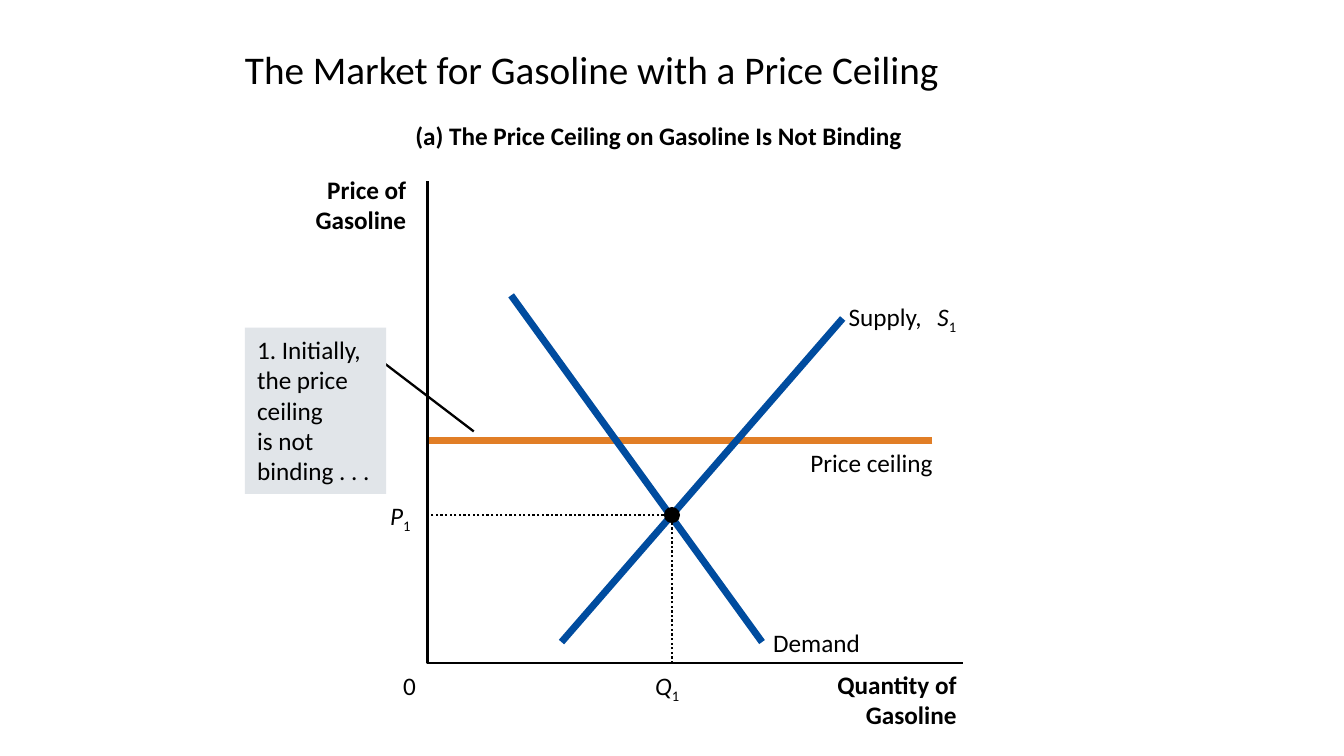
from lxml import etree
from pptx import Presentation
from pptx.dml.color import RGBColor
from pptx.enum.dml import MSO_LINE
from pptx.enum.shapes import MSO_CONNECTOR, MSO_SHAPE
from pptx.enum.text import MSO_ANCHOR, MSO_AUTO_SIZE, PP_ALIGN
from pptx.oxml.ns import qn
from pptx.util import Inches, Pt

STRAIGHT = MSO_CONNECTOR.STRAIGHT
RECTANGLE, OVAL = MSO_SHAPE.RECTANGLE, MSO_SHAPE.OVAL
LEFT, RIGHT = PP_ALIGN.LEFT, PP_ALIGN.RIGHT
TOP, MIDDLE = MSO_ANCHOR.TOP, MSO_ANCHOR.MIDDLE
NO_FIT = MSO_AUTO_SIZE.NONE
DOTTED = MSO_LINE.ROUND_DOT

COLORS = {"ink": "000000", "curve": "004C9F", "ceiling": "E17E26", "note": "E1E5E9"}
THIN, THICK = 1.63, 5

deck = Presentation()
deck.slide_width, deck.slide_height = Inches(13.33), Inches(7.5)
slide = deck.slides.add_slide(deck.slide_layouts[5])
shapes = slide.shapes
column, row = deck.slide_width / 100, deck.slide_height / 100


def place(x, y):
    return round(x * column), round(y * row)


def write(frame, text, size=18, bold=False, align=LEFT, anchor=TOP):
    frame.text = text
    frame.auto_size = NO_FIT
    frame.vertical_anchor = anchor
    for paragraph in frame.paragraphs:
        paragraph.alignment = align
        for run in paragraph.runs:
            run.font.name = "Calibri"
            run.font.size = Pt(size)
            run.font.bold = bold
            run.font.color.rgb = RGBColor.from_string(COLORS["ink"])


title = shapes.title
title.left, title.top = place(17.48, 5.07)
title.width, title.height = place(66.3, 9.33)
write(title.text_frame, "The Market for Gasoline with a Price Ceiling", size=28, anchor=MIDDLE)
title.text_frame.paragraphs[0].line_spacing = 0.8

origin_x, origin_y = 31.8, 87.73
market_x, market_y = 50, 68.13
ceiling_y = 58.33

segments = [
    ((35.25, 57.07), (27.38, 46.4), "ink", THIN),
    ((69.38, ceiling_y), (origin_x, ceiling_y), "ceiling", THICK),
    ((38.03, 39.07), (56.7, 84.93), "curve", THICK),
    ((41.78, 84.93), (62.7, 42.13), "curve", THICK),
]
for start, end, color, weight in segments:
    segment = shapes.add_connector(STRAIGHT, *place(*start), *place(*end))
    segment.line.color.rgb = RGBColor.from_string(COLORS[color])
    segment.line.width = Pt(weight)
    etree.SubElement(segment._element.spPr, qn("a:effectLst"))

note = shapes.add_shape(RECTANGLE, *place(18.23, 43.33), *place(10.5, 22))
note.shadow.inherit = False
note.fill.solid()
note.fill.fore_color.rgb = RGBColor.from_string(COLORS["note"])
note.line.fill.background()
write(note.text_frame, "1. Initially,\vthe price\vceiling\vis not\vbinding . . .")
note.text_frame.margin_left, note.text_frame.margin_top = place(0.9, 0.9)
note.text_frame.margin_right = 0

guides = [(market_x, origin_y), (market_x, market_y), (origin_x, market_y)]
axes = [(origin_x, 24), (origin_x, origin_y), (71.63, origin_y)]
for points, dash in [(guides, DOTTED), (axes, None)]:
    corner_start, *corners = [place(*point) for point in points]
    builder = shapes.build_freeform(*corner_start)
    builder.add_line_segments(corners, close=False)
    outline = builder.convert_to_shape()
    outline.shadow.inherit = False
    outline.fill.background()
    outline.line.color.rgb = RGBColor.from_string(COLORS["ink"])
    outline.line.width = Pt(THIN)
    outline.line.dash_style = dash

dot_width, dot_height = 1.2, 2.13
equilibrium = shapes.add_shape(
    OVAL,
    *place(market_x - dot_width / 2, market_y - dot_height / 2),
    *place(dot_width, dot_height),
)
equilibrium.shadow.inherit = False
equilibrium.fill.solid()
equilibrium.fill.fore_color.rgb = RGBColor.from_string(COLORS["ink"])
equilibrium.line.fill.background()

labels = [
    ("(a) The Price Ceiling on Gasoline Is Not Binding", 30.9, 15.87, 36.45, True, LEFT),
    ("Price of\nGasoline", 23.25, 23.07, 6.98, True, RIGHT),
    ("Quantity of\nGasoline", 62.18, 88.53, 9, True, RIGHT),
    ("0", 30, 88.67, 0.98, False, LEFT),
    ("Price ceiling", 60.3, 59.2, 9.23, False, LEFT),
    ("Demand", 57.53, 82.93, 6.53, False, LEFT),
    ("Supply,", 63.15, 39.87, 5.93, False, LEFT),
    ("S", 69.75, 39.87, 1.5, False, LEFT),
    ("P", 29.03, 66.13, 1.65, False, LEFT),
    ("Q", 48.75, 88.67, 1.88, False, LEFT),
]
for text, x, y, width, bold, align in labels:
    lines = text.count("\n") + 1
    label = shapes.add_textbox(*place(x, y), *place(width, 4.07 * lines))
    frame = label.text_frame
    frame.margin_left = frame.margin_right = frame.margin_top = frame.margin_bottom = 0
    write(frame, text, bold=bold, align=align)
    frame.word_wrap = False
    if text in ("S", "P", "Q"):
        symbol = frame.paragraphs[0].runs[0]
        symbol.font.italic = True
        subscript = frame.paragraphs[0].add_run()
        subscript.text = "1"
        subscript.font.name = symbol.font.name
        subscript.font.size = symbol.font.size
        subscript.font.color.rgb = symbol.font.color.rgb
        subscript._r.get_or_add_rPr().set("baseline", "-25000")

deck.save("out.pptx")
